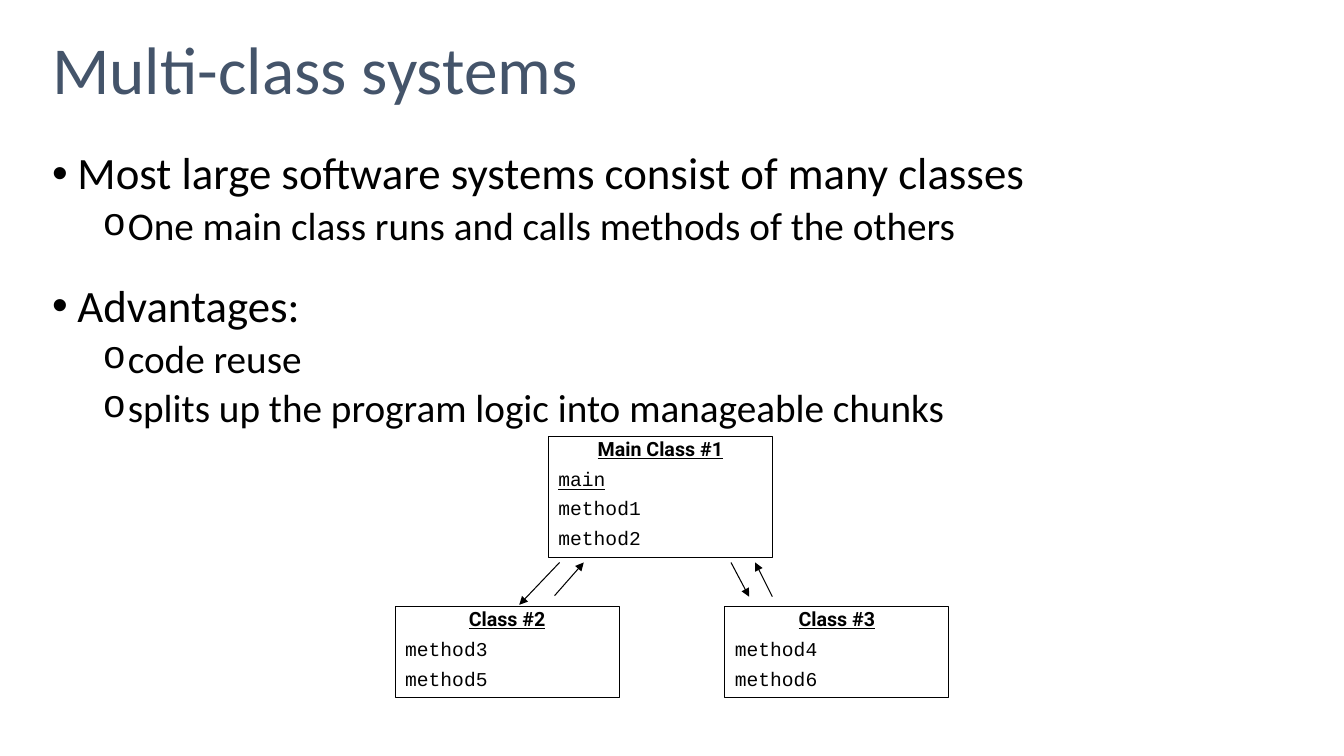
from dataclasses import dataclass

from lxml import etree
from pptx import Presentation
from pptx.dml.color import RGBColor
from pptx.enum.shapes import MSO_CONNECTOR, MSO_SHAPE
from pptx.enum.text import MSO_ANCHOR, PP_ALIGN
from pptx.oxml.ns import qn
from pptx.util import Inches, Pt

RECT = MSO_SHAPE.RECTANGLE
STRAIGHT = MSO_CONNECTOR.STRAIGHT
TOP, MIDDLE = MSO_ANCHOR.TOP, MSO_ANCHOR.MIDDLE
LEFT, CENTER = PP_ALIGN.LEFT, PP_ALIGN.CENTER


@dataclass(frozen=True)
class Theme:
    title_color: RGBColor = RGBColor(0x44, 0x54, 0x6A)
    ink: RGBColor = RGBColor(0, 0, 0)
    text_font: str = "Calibri"
    heading_font: str = "Roboto"
    code_font: str = "Courier New"
    title_size: int = 48
    body_sizes: tuple = (32, 28)
    class_size: int = 14
    line_width: float = 0.75


THEME = Theme()

# (level, space before in points, text)
BULLETS = [
    (0, 0, "Most large software systems consist of many classes"),
    (1, 5, "One main class runs and calls methods of the others"),
    (0, 25, "Advantages:"),
    (1, 5, "code reuse"),
    (1, 5, "splits up the program logic into manageable chunks"),
]

# name, methods, (left, top, width, height) within the diagram
CLASSES = [
    ("Main Class #1", ["main", "method1", "method2"], (1.52, 0, 2.22, 1.2)),
    ("Class #2", ["method3", "method5"], (0, 1.69, 2.22, 0.9)),
    ("Class #3", ["method4", "method6"], (3.27, 1.69, 2.22, 0.9)),
]

# (start x, start y, end x, end y) within the diagram
CALLS = [
    (1.63, 1.25, 1.23, 1.67),
    (1.58, 1.58, 1.87, 1.25),
    (3.33, 1.25, 3.51, 1.59),
    (3.74, 1.59, 3.57, 1.25),
]


def set_font(p, name, size, color):
    p.font.name = name
    p.font.size = Pt(size)
    p.font.color.rgb = color


def add_paragraph(tf, first, text, line_spacing, space_before):
    p = tf.paragraphs[0] if first else tf.add_paragraph()
    p.add_run().text = text
    p.line_spacing = line_spacing
    p.space_before = Pt(space_before)
    return p


def add_bullet(p, level):
    pPr = p._p.get_or_add_pPr()
    pPr.set("marL", str(Inches(0.25 + 0.5 * level)))
    pPr.set("indent", str(-Inches(0.25)))
    font, char = [("Arial", "•"), (THEME.code_font, "o")][level]
    bu_font = etree.Element(qn("a:buFont"), typeface=font)
    bu_char = etree.Element(qn("a:buChar"), char=char)
    defaults = pPr.find(qn("a:defRPr"))
    defaults.addprevious(bu_font)
    defaults.addprevious(bu_char)


def add_text_box(s, box, anchor):
    tf = s.shapes.add_textbox(*map(Inches, box)).text_frame
    tf.word_wrap = True
    tf.vertical_anchor = anchor
    return tf


def add_title(s, box, text):
    tf = add_text_box(s, box, MIDDLE)
    p = add_paragraph(tf, True, text, 0.9, 0)
    set_font(p, THEME.text_font, THEME.title_size, THEME.title_color)


def add_body(s, box):
    tf = add_text_box(s, box, TOP)
    for i, (level, space_before, text) in enumerate(BULLETS):
        p = add_paragraph(tf, i == 0, text, 0.9, space_before)
        p.level = level
        set_font(p, THEME.text_font, THEME.body_sizes[level], THEME.ink)
        add_bullet(p, level)


def add_class_box(shapes, box, name, methods):
    sp = shapes.add_shape(RECT, *map(Inches, box))
    sp.shadow.inherit = False
    sp.fill.background()
    sp.line.color.rgb = THEME.ink
    sp.line.width = Pt(THEME.line_width)
    tf = sp.text_frame
    tf.word_wrap = True
    tf.vertical_anchor = TOP
    for i, text in enumerate([name, *methods]):
        heading = i == 0
        p = add_paragraph(tf, heading, text, 0.8, 0 if heading else 7.8)
        p.alignment = CENTER if heading else LEFT
        font = THEME.heading_font if heading else THEME.code_font
        set_font(p, font, THEME.class_size, THEME.ink)
        p.font.bold = heading
        p.font.underline = heading or text == "main"


def add_arrow(shapes, x1, y1, x2, y2):
    line = shapes.add_connector(STRAIGHT, *map(Inches, (x1, y1, x2, y2)))
    line.line.color.rgb = THEME.ink
    line.line.width = Pt(THEME.line_width)
    etree.SubElement(line.line._get_or_add_ln(), qn("a:tailEnd"), type="triangle")
    etree.SubElement(line._element.spPr, qn("a:effectLst"))


def add_class_diagram(s, left, top):
    shapes = s.shapes.add_group_shape().shapes
    for name, methods, (x, y, w, h) in CLASSES:
        add_class_box(shapes, (left + x, top + y, w, h), name, methods)
    for x1, y1, x2, y2 in CALLS:
        add_arrow(shapes, left + x1, top + y1, left + x2, top + y2)


def main():
    prs = Presentation()
    prs.slide_width, prs.slide_height = Inches(13.33), Inches(7.5)
    s = prs.slides.add_slide(prs.slide_layouts[6])
    add_title(s, (0.42, 0, 12.5, 1.45), "Multi-class systems")
    add_body(s, (0.42, 1.45, 12.5, 5.66))
    add_class_diagram(s, 3.92, 4.33)
    prs.save("out.pptx")


if __name__ == "__main__":
    main()
